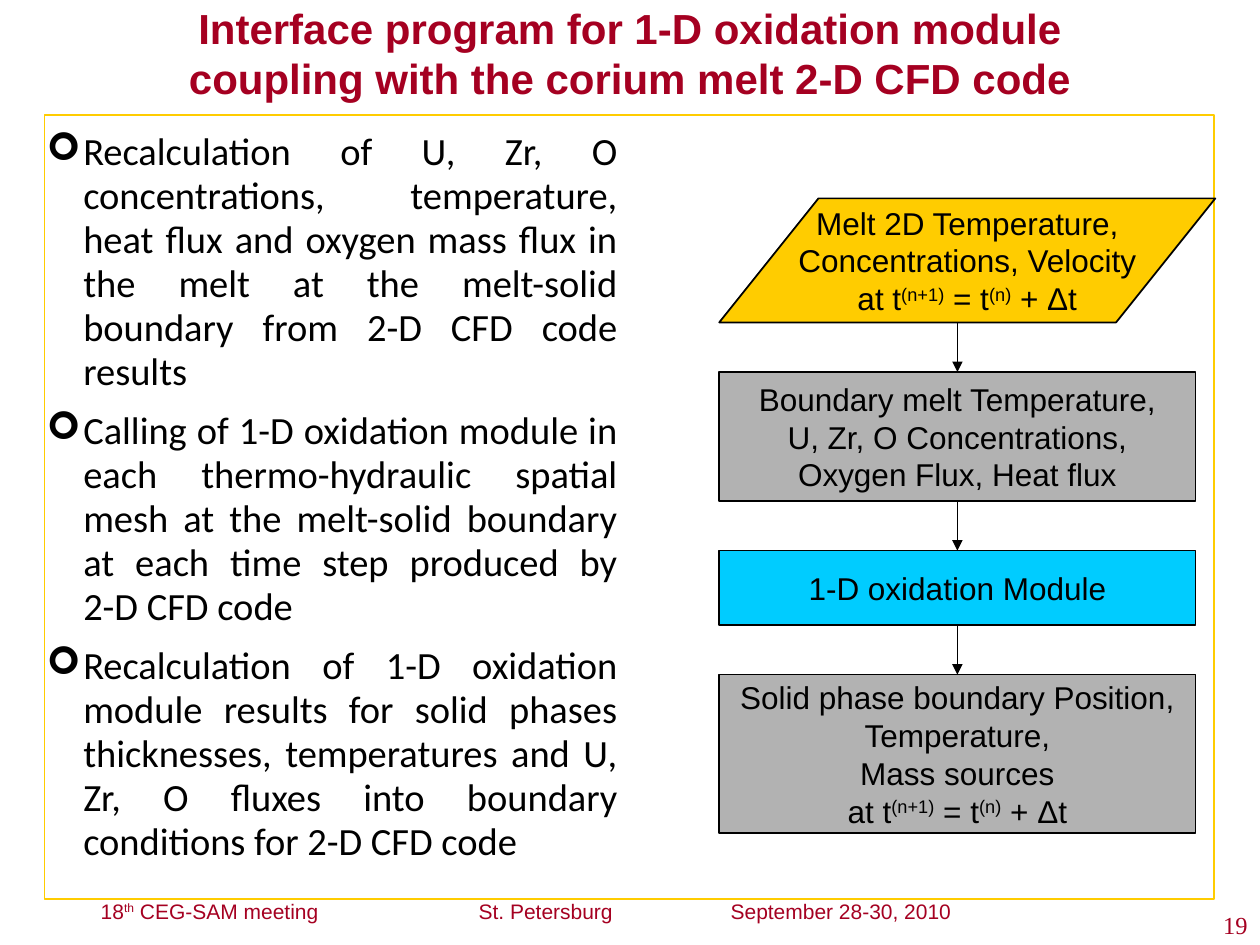
from lxml.etree import SubElement
from pptx import Presentation
from pptx.dml.color import RGBColor
from pptx.enum.shapes import MSO_CONNECTOR, MSO_SHAPE
from pptx.enum.text import MSO_ANCHOR, PP_ALIGN
from pptx.oxml.ns import qn
from pptx.util import Cm, Pt

TITLE = ("Interface program for 1-D oxidation module "
         "coupling with the corium melt 2-D CFD code")
POINTS = [
    "Recalculation of U, Zr, O concentrations, temperature, heat flux and "
    "oxygen mass flux in the melt at the melt-solid boundary from 2-D CFD "
    "code results",
    "Calling of 1-D oxidation module in each thermo-hydraulic spatial mesh "
    "at the melt-solid boundary at each time step produced by\v2-D CFD code",
    "Recalculation of 1-D oxidation module results for solid phases "
    "thicknesses, temperatures and U, Zr, O fluxes into boundary conditions "
    "for 2-D CFD code",
]
# Text between carets is superscript.
STEP = "at t^(n+1)^ = t^(n)^ + Δt"
FOOTER = "18^th^ CEG-SAM meeting\tSt. Petersburg\tSeptember 28-30, 2010"
TABS = [7.62, 12.7]
NUMBER = "19"

DATA, BOX = MSO_SHAPE.FLOWCHART_DATA, MSO_SHAPE.FLOWCHART_PROCESS
FLOW = [  # shape, width, height, fill, lines
    (DATA, 10, 2.5, "FFCC00",
     ["Melt 2D Temperature,", "Concentrations, Velocity", STEP]),
    (BOX, 9.6, 2.6, "B2B2B2",
     ["Boundary melt Temperature,", "U, Zr, O Concentrations,",
      "Oxygen Flux, Heat flux"]),
    (BOX, 9.6, 1.5, "00CCFF", ["1-D oxidation Module"]),
    (BOX, 9.6, 3.2, "B2B2B2",
     ["Solid phase boundary Position,", "Temperature,", "Mass sources", STEP]),
]
LEFT, TOP, GAP, MID = 14.5, 4, 1, 19.3
RED, BLACK = "A50021", "000000"


def color(code):
    return RGBColor.from_string(code)


def style(para, size, font, code, align=PP_ALIGN.LEFT, bold=False):
    para.alignment = align
    para.font.size = Pt(size)
    para.font.name = font
    para.font.color.rgb = color(code)
    para.font.bold = bold


def write(para, text):
    """Fill a paragraph, raising the parts between carets."""
    for i, part in enumerate(text.split("^")):
        run = para.add_run()
        run.text = part
        if i % 2:
            run.font._element.set("baseline", "30000")


def paras(frame, count):
    return [frame.paragraphs[0]] + [frame.add_paragraph()
                                    for _ in range(count - 1)]


def add_text(x, y, w, h, wrap=True):
    frame = slide.shapes.add_textbox(Cm(x), Cm(y), Cm(w), Cm(h)).text_frame
    frame.word_wrap = wrap
    return frame


def add_box(kind, x, y, w, h, fill, line):
    box = slide.shapes.add_shape(kind, Cm(x), Cm(y), Cm(w), Cm(h))
    box.shadow.inherit = False
    box.fill.solid()
    box.fill.fore_color.rgb = color(fill)
    box.line.color.rgb = color(line)
    box.line.width = Pt(1)
    return box


def add_arrow(x, y, end):
    arrow = slide.shapes.add_connector(
        MSO_CONNECTOR.STRAIGHT, Cm(x), Cm(y), Cm(x), Cm(end))
    arrow.line.color.rgb = color(BLACK)
    arrow.line.width = Pt(1)
    SubElement(arrow.line._get_or_add_ln(), qn("a:tailEnd"),
               type="triangle", w="med", len="med")
    SubElement(arrow._element.spPr, qn("a:effectLst"))


deck = Presentation()
deck.slide_width, deck.slide_height = Cm(25.4), Cm(19.05)
slide = deck.slides.add_slide(deck.slide_layouts[6])

add_box(MSO_SHAPE.RECTANGLE, 0.9, 2.32, 23.57, 15.8, "FFFFFF", "FFCC00")

para = add_text(1.78, 17.98, 17.9, 0.94).paragraphs[0]
write(para, FOOTER)
tabs = SubElement(para._p.get_or_add_pPr(), qn("a:tabLst"))
for stop in TABS:
    SubElement(tabs, qn("a:tab"), pos=str(Cm(stop)), algn="l")
style(para, 12, "Arial", RED)

frame = add_text(20.12, 18.24, 5.28, 0.81)
frame.vertical_anchor = MSO_ANCHOR.MIDDLE
frame.paragraphs[0].text = NUMBER
style(frame.paragraphs[0], 14, "Times New Roman", RED, PP_ALIGN.RIGHT)

frame = add_text(0.69, 2.51, 12.01, 15.11)
for i, (para, text) in enumerate(zip(paras(frame, len(POINTS)), POINTS)):
    para.text = text
    props = para._p.get_or_add_pPr()
    props.set("marL", str(Cm(0.74)))
    props.set("indent", str(-Cm(0.74)))
    SubElement(props, qn("a:buFont"), typeface="Wingdings")
    SubElement(props, qn("a:buChar"), char="➢")
    para.line_spacing = 0.95
    if i:
        para.space_before = Pt(9)
    style(para, 22, "Calibri", BLACK, PP_ALIGN.JUSTIFY)

y = TOP
for i, (kind, w, h, fill, lines) in enumerate(FLOW):
    if i:
        add_arrow(MID, y - GAP, y)
    frame = add_box(kind, LEFT, y, w, h, fill, BLACK).text_frame
    frame.word_wrap = False
    frame.vertical_anchor = MSO_ANCHOR.MIDDLE
    for para, text in zip(paras(frame, len(lines)), lines):
        write(para, text)
        style(para, 18, "Arial", BLACK, PP_ALIGN.CENTER)
    y += h + GAP

para = add_text(2.9, -0.08, 19.6, 2.16).paragraphs[0]
para.text = TITLE
style(para, 24, "Arial", RED, PP_ALIGN.CENTER, True)

deck.save("out.pptx")
